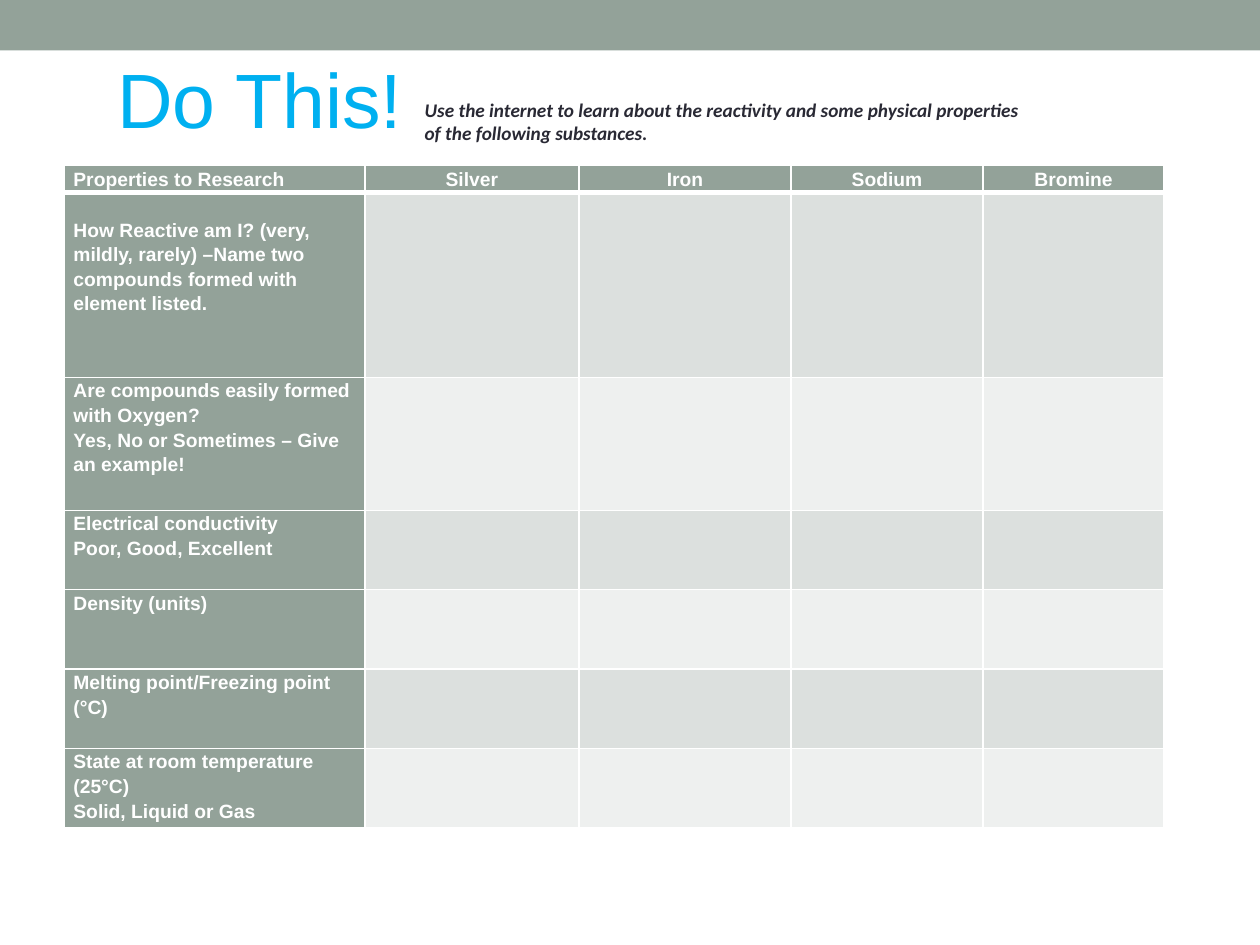
from lxml import etree
from pptx import Presentation
from pptx import util as u
from pptx.dml.color import RGBColor
from pptx.enum import shapes, text
from pptx.oxml import ns

COLORS = {
    "sage": "93A299", "band_dark": "DCE0DE", "band_light": "EEF0EF",
    "white": "FFFFFF", "sky": "00B0F0", "ink": "292934",
}
SUBSTANCES = ["Silver", "Iron", "Sodium", "Bromine"]
# Each question is a list of lines
QUESTIONS = [
    ["How Reactive am I? (very, mildly, rarely) –Name two compounds formed "
     "with element listed."],
    ["Are compounds easily formed with Oxygen?",
     "Yes, No or Sometimes – Give an example!"],
    ["Electrical conductivity", "Poor, Good, Excellent"],
    ["Density (units)"],
    ["Melting point/Freezing point (°C)"],
    ["State at room temperature (25°C)", "Solid, Liquid or Gas"],
]
COLUMN_WIDTHS = [6.06, 4.31, 4.28, 3.87, 3.65]
ROW_HEIGHTS = [0.52, 3.73, 2.68] + [1.6] * 4


def rgb(name):
    return RGBColor.from_string(COLORS[name])


def add_run(paragraph, words, size, font, color, bold=False, italic=False):
    run = paragraph.add_run()
    run.text = words
    run.font.size = u.Pt(size)
    run.font.name = font
    run.font.bold = bold
    run.font.italic = italic
    run.font.color.rgb = rgb(color)


def set_borders(cell, bottom=1):
    properties = cell._tc.get_or_add_tcPr()
    widths = {"lnL": 1, "lnR": 1, "lnT": 1, "lnB": bottom}
    for position, (side, width) in enumerate(widths.items()):
        line = etree.Element(ns.qn("a:" + side), w=str(u.Pt(width)))
        fill = etree.SubElement(line, ns.qn("a:solidFill"))
        etree.SubElement(fill, ns.qn("a:srgbClr"), val=COLORS["white"])
        properties.insert(position, line)


def fill_cell(cell, color, bottom=1):
    cell.fill.solid()
    cell.fill.fore_color.rgb = rgb(color)
    set_borders(cell, bottom)


def label_cell(cell, lines, align=text.PP_ALIGN.LEFT, top=0):
    cell.margin_left = cell.margin_right = u.Cm(0.18)
    cell.margin_top, cell.margin_bottom = u.Cm(top), 0
    frame = cell.text_frame
    for index, line in enumerate(lines):
        paragraph = frame.add_paragraph() if index else frame.paragraphs[0]
        paragraph.alignment = align
        paragraph.line_spacing = 1.15
        add_run(paragraph, line, 11, "Arial", "white", bold=True)


def add_banner(slide, left, top, width, height):
    banner = slide.shapes.add_shape(
        shapes.MSO_SHAPE.RECTANGLE, u.Cm(left), u.Cm(top), u.Cm(width), u.Cm(height))
    banner.shadow.inherit = False
    banner.fill.solid()
    banner.fill.fore_color.rgb = rgb("sage")
    banner.line.fill.background()


def add_heading(slide, left, top, width, height):
    # Title
    title = slide.shapes.add_textbox(u.Cm(left), u.Cm(top), u.Cm(8.53), u.Cm(height))
    title.text_frame.word_wrap = True
    add_run(title.text_frame.paragraphs[0], "Do This!", 44, "Arial", "sky")

    # Instruction, level with the lower part of the title
    indent, drop = 6.2, 0.94
    instruction = slide.shapes.add_textbox(
        u.Cm(left + indent), u.Cm(top + drop), u.Cm(width - indent), u.Cm(height - drop))
    frame = instruction.text_frame
    frame.word_wrap = True
    frame.vertical_anchor = text.MSO_ANCHOR.MIDDLE
    paragraph = frame.paragraphs[0]
    style = (11, "Calibri", "ink", True, True)
    add_run(paragraph, "Use the internet to learn about the reactivity "
                       "and some physical properties", *style)
    paragraph.add_line_break()
    add_run(paragraph, "of the following substances.", *style)


def add_research_table(slide, left, top, width, height):
    table = slide.shapes.add_table(
        len(ROW_HEIGHTS), len(COLUMN_WIDTHS),
        u.Cm(left), u.Cm(top), u.Cm(width), u.Cm(height)).table
    for column, column_width in zip(table.columns, COLUMN_WIDTHS):
        column.width = u.Cm(column_width)
    for row, row_height in zip(table.rows, ROW_HEIGHTS):
        row.height = u.Cm(row_height)

    # Header row
    for column, heading in enumerate(["Properties to Research"] + SUBSTANCES):
        cell = table.cell(0, column)
        fill_cell(cell, "sage", bottom=3)
        label_cell(cell, [heading],
                   text.PP_ALIGN.CENTER if column else text.PP_ALIGN.LEFT)

    # Questions and banded answer cells
    for row, question in enumerate(QUESTIONS, start=1):
        label_cell(table.cell(row, 0), question, top=0.49 if row == 1 else 0)
        fill_cell(table.cell(row, 0), "sage")
        for column in range(1, len(COLUMN_WIDTHS)):
            fill_cell(table.cell(row, column), "band_dark" if row % 2 else "band_light")


def main():
    deck = Presentation()
    deck.slide_width, deck.slide_height = u.Cm(25.4), u.Cm(19.05)
    slide = deck.slides.add_slide(deck.slide_layouts[6])
    add_banner(slide, 0, 0, 25.4, 1.02)
    add_heading(slide, 2.11, 0.91, 18.87, 2.13)
    add_research_table(slide, 1.3, 3.34, sum(COLUMN_WIDTHS), sum(ROW_HEIGHTS))
    deck.save("out.pptx")


if __name__ == "__main__":
    main()
